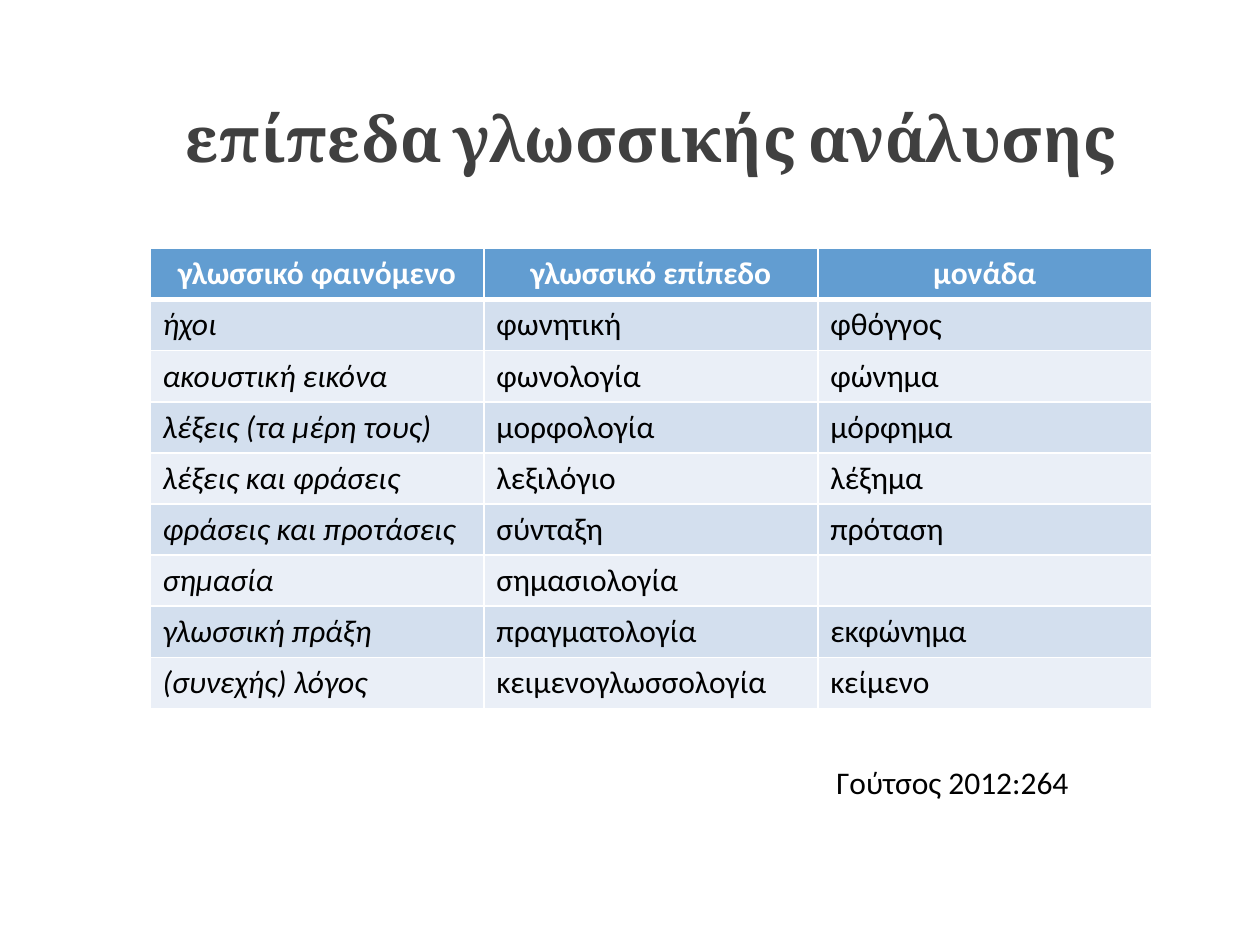
from lxml.etree import SubElement
from pptx import Presentation
from pptx.dml.color import RGBColor
from pptx.enum.text import MSO_ANCHOR, PP_ALIGN
from pptx.oxml.ns import qn
from pptx.util import Inches, Pt

COLORS = {
    "title": "404040",
    "text": "000000",
    "header": "629DD1",
    "odd": "D3DFEE",
    "even": "EAEFF7",
    "white": "FFFFFF",
}
WIDTH, HEIGHT = Inches(10), Inches(7.5)
TITLE_BOX = (0.119, 0.04, 0.795, 0.195)
TABLE_BOX = (0.119, 0.263, 0.795, 0.487)
CITATION_BOX = (0.507, 0.801, 0.351, 0.053)

LEVELS = [
    ("γλωσσικό φαινόμενο", "γλωσσικό επίπεδο", "μονάδα"),
    ("ήχοι", "φωνητική", "φθόγγος"),
    ("ακουστική εικόνα", "φωνολογία", "φώνημα"),
    ("λέξεις (τα μέρη τους)", "μορφολογία", "μόρφημα"),
    ("λέξεις και φράσεις", "λεξιλόγιο", "λέξημα"),
    ("φράσεις και προτάσεις", "σύνταξη", "πρόταση"),
    ("σημασία", "σημασιολογία", ""),
    ("γλωσσική πράξη", "πραγματολογία", "εκφώνημα"),
    ("(συνεχής) λόγος", "κειμενογλωσσολογία", "κείμενο"),
]


def place(box):
    """Turn shares of the slide into left, top, width and height."""
    left, top, width, height = box
    return (round(left * WIDTH), round(top * HEIGHT),
            round(width * WIDTH), round(height * HEIGHT))


def write(text_frame, text, color, alignment, **font_format):
    """Write one formatted paragraph into a text frame."""
    paragraph = text_frame.paragraphs[0]
    paragraph.alignment = alignment
    run = paragraph.add_run()
    run.text = text
    values = {"name": "Calibri", "size": Pt(18), **font_format}
    for name, value in values.items():
        setattr(run.font, name, value)
    run.font.color.rgb = RGBColor.from_string(COLORS[color])
    return paragraph


def add_title(slide, box):
    """Add the centred slide title."""
    text_frame = slide.shapes.add_textbox(*place(box)).text_frame
    text_frame.word_wrap = True
    text_frame.vertical_anchor = MSO_ANCHOR.MIDDLE
    paragraph = write(text_frame, "επίπεδα γλωσσικής ανάλυσης", "title",
                      PP_ALIGN.CENTER, name="Cambria", size=Pt(36), bold=True)
    paragraph.line_spacing = Pt(52)


def add_citation(slide, box):
    """Add the right-aligned citation under the table."""
    text_frame = slide.shapes.add_textbox(*place(box)).text_frame
    text_frame.word_wrap = True
    write(text_frame, "Γούτσος 2012:264", "text", PP_ALIGN.RIGHT)


def add_borders(cell, widths):
    """Draw white cell borders with a width in points for each side."""
    properties = cell._tc.get_or_add_tcPr()
    for side, width in widths.items():
        line = SubElement(properties, qn(f"a:ln{side}"), w=str(Pt(width)))
        fill = SubElement(line, qn("a:solidFill"))
        SubElement(fill, qn("a:srgbClr"), val=COLORS["white"])


def style_cell(cell, text, row, column):
    """Fill, border and write one cell according to its place in the grid."""
    is_header = row == 0
    add_borders(cell, {"L": 1, "R": 1, "T": 3 if row == 1 else 1,
                       "B": 3 if is_header else 1})
    band = "header" if is_header else "odd" if row % 2 else "even"
    cell.fill.solid()
    cell.fill.fore_color.rgb = RGBColor.from_string(COLORS[band])
    if text:
        write(cell.text_frame, text, "white" if is_header else "text",
              PP_ALIGN.CENTER if is_header else PP_ALIGN.LEFT,
              bold=is_header, italic=not is_header and column == 0)


def add_levels_table(slide, box):
    """Add the banded table of language levels."""
    table = slide.shapes.add_table(
        len(LEVELS), len(LEVELS[0]), *place(box)).table
    for row, texts in enumerate(LEVELS):
        for column, text in enumerate(texts):
            style_cell(table.cell(row, column), text, row, column)


def main():
    """Build and save the presentation."""
    presentation = Presentation()
    presentation.slide_width, presentation.slide_height = WIDTH, HEIGHT
    slide = presentation.slides.add_slide(presentation.slide_layouts[6])
    add_title(slide, TITLE_BOX)
    add_levels_table(slide, TABLE_BOX)
    add_citation(slide, CITATION_BOX)
    presentation.save("out.pptx")


if __name__ == "__main__":
    main()
